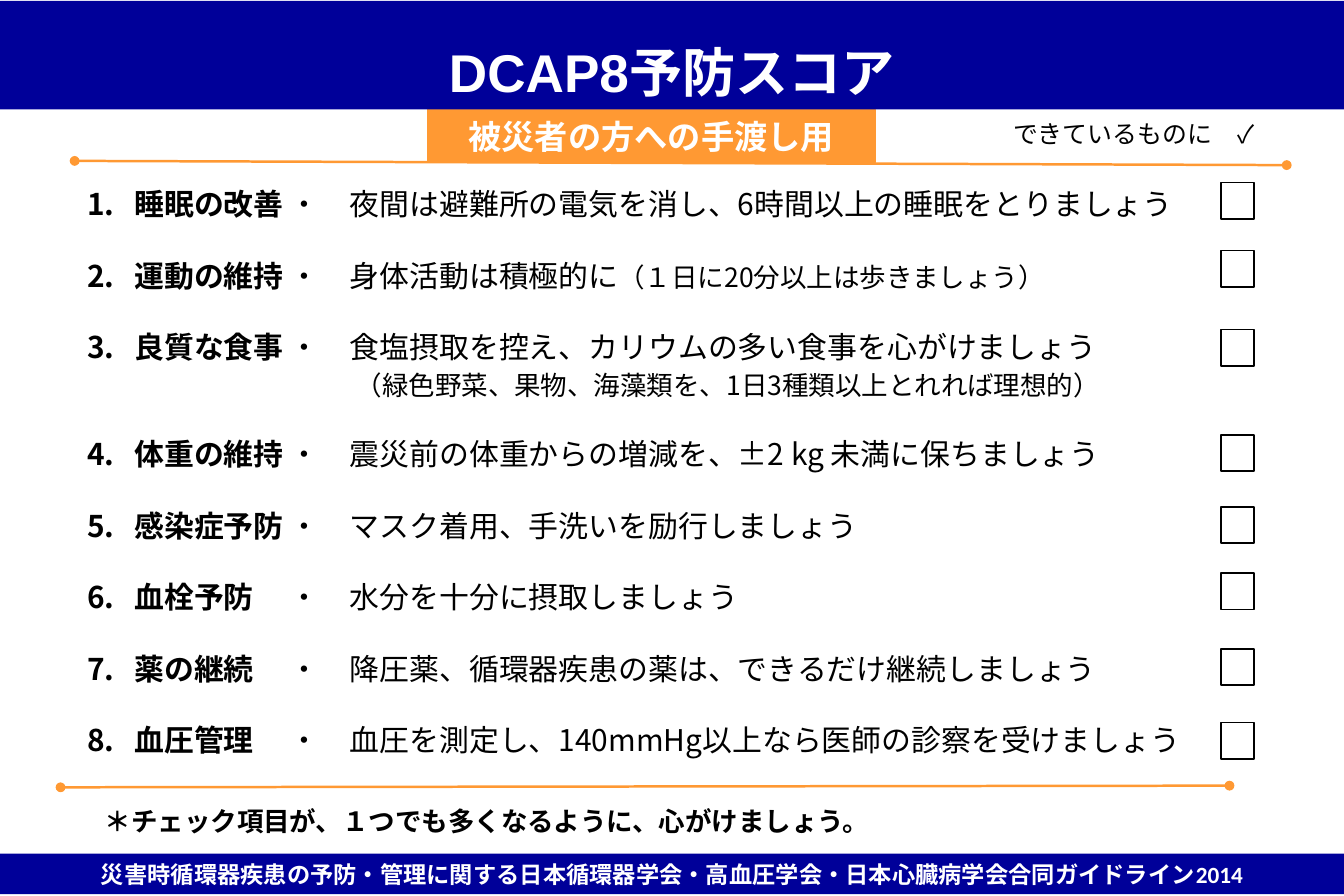
from lxml.etree import SubElement
from pptx import Presentation
from pptx.dml.color import RGBColor
from pptx.enum.lang import MSO_LANGUAGE_ID
from pptx.enum.shapes import MSO_CONNECTOR, MSO_SHAPE
from pptx.enum.text import MSO_ANCHOR, PP_ALIGN
from pptx.oxml.ns import qn
from pptx.util import Pt

JAPANESE = "Noto Sans CJK JP"
NAVY, ORANGE, WHITE, BLACK = "000099", "FF9933", "FFFFFF", "000000"
LINE_PITCH = 21.55
LABEL_STOP, ADVICE_STOP, DETAIL_INDENT = 28.5, 122.3, 162

# label, advice, smaller remark, smaller second line, top of the check box
ITEMS = [
    ("睡眠の改善", "夜間は避難所の電気を消し、6時間以上の睡眠をとりましょう", "", "", 110),
    ("運動の維持", "身体活動は積極的に", "（１日に20分以上は歩きましょう）", "", 151),
    ("良質な食事", "食塩摂取を控え、カリウムの多い食事を心がけましょう", "",
     "（緑色野菜、果物、海藻類を、1日3種類以上とれれば理想的）", 198.5),
    ("体重の維持", "震災前の体重からの増減を、±2 kg 未満に保ちましょう", "", "", 262),
    ("感染症予防", "マスク着用、手洗いを励行しましょう", "", "", 305.5),
    ("血栓予防", "水分を十分に摂取しましょう", "", "", 345.5),
    ("薬の継続", "降圧薬、循環器疾患の薬は、できるだけ継続しましょう", "", "", 391),
    ("血圧管理", "血圧を測定し、140mmHg以上なら医師の診察を受けましょう", "", "", 435.5),
]


def color(code):
    """Turn a hex string into a colour."""
    return RGBColor.from_string(code)


def write(paragraph, text, size=18, bold=False, ink=BLACK, font=JAPANESE):
    """Add a formatted run to a paragraph."""
    run = paragraph.add_run()
    run.text = text
    run.font.size = Pt(size)
    run.font.bold = bold
    run.font.color.rgb = color(ink)
    run.font.name = font
    run.font.language_id = MSO_LANGUAGE_ID.JAPANESE
    SubElement(run.font._element, qn("a:ea"), typeface=JAPANESE)


def add_box(slide, left, top, width, height, fill, outline=None, weight=1):
    """Add a filled rectangle, outlined if a colour is given."""
    box = slide.shapes.add_shape(
        MSO_SHAPE.RECTANGLE, Pt(left), Pt(top), Pt(width), Pt(height))
    box.shadow.inherit = False
    box.fill.solid()
    box.fill.fore_color.rgb = color(fill)
    if outline:
        box.line.color.rgb = color(outline)
        box.line.width = Pt(weight)
    else:
        box.line.fill.background()
    return box


def add_banner(slide, left, top, width, height, text, fill, outline=None,
               spacing=1.0, **style):
    """Add a coloured bar with centred bold white text."""
    frame = add_box(slide, left, top, width, height, fill, outline, 0.75).text_frame
    frame.word_wrap = True
    frame.vertical_anchor = MSO_ANCHOR.MIDDLE
    heading = frame.paragraphs[0]
    heading.alignment = PP_ALIGN.CENTER
    heading.line_spacing = spacing
    write(heading, text, bold=True, ink=WHITE, **style)


def add_text(slide, left, top, width, height):
    """Add an empty wrapping text box and return its frame."""
    frame = slide.shapes.add_textbox(
        Pt(left), Pt(top), Pt(width), Pt(height)).text_frame
    frame.word_wrap = True
    return frame


def add_rule(slide, x1, y1, x2, y2):
    """Add an orange line with round ends."""
    rule = slide.shapes.add_connector(
        MSO_CONNECTOR.STRAIGHT, Pt(x1), Pt(y1), Pt(x2), Pt(y2))
    rule.line.color.rgb = color(ORANGE)
    rule.line.width = Pt(1.5)
    stroke = rule.line._get_or_add_ln()
    for end in ("a:headEnd", "a:tailEnd"):
        SubElement(stroke, qn(end), type="oval")
    SubElement(rule._element.spPr, qn("a:effectLst"))


def set_columns(paragraph, *stops):
    """Set left tab stops on a paragraph."""
    tabs = SubElement(paragraph._p.get_or_add_pPr(), qn("a:tabLst"))
    for stop in stops:
        SubElement(tabs, qn("a:tab"), pos=str(int(Pt(stop))), algn="l")


def add_checklist(slide):
    """Add the numbered advice and a check box for each item."""
    frame = add_text(slide, 45.4, 108.5, 695.5, 356)
    for number, (label, advice, remark, detail, box_top) in enumerate(ITEMS, 1):
        entry = frame.paragraphs[0] if number == 1 else frame.add_paragraph()
        entry.line_spacing = Pt(LINE_PITCH)
        entry.space_after = Pt(0 if detail else LINE_PITCH)
        set_columns(entry, LABEL_STOP, ADVICE_STOP)
        write(entry, f"{number}.\t{label}\t", bold=True)
        write(entry, f"・　{advice}")
        if remark:
            write(entry, remark, size=16)
        if detail:
            second_line = frame.add_paragraph()
            second_line.line_spacing = Pt(LINE_PITCH)
            second_line.space_after = Pt(LINE_PITCH)
            second_line._p.get_or_add_pPr().set("marL", str(int(Pt(DETAIL_INDENT))))
            write(second_line, detail, size=16)
        add_box(slide, 736, box_top, 20, 22, WHITE, BLACK)


def main():
    """Build the slide and save it."""
    deck = Presentation()
    deck.slide_width, deck.slide_height = Pt(810), Pt(540)
    slide = deck.slides.add_slide(deck.slide_layouts[6])

    add_checklist(slide)
    add_rule(slide, 45, 97, 775.5, 99.5)
    add_rule(slide, 36.5, 474.5, 741, 473.5)

    check_hint = add_text(slide, 603.5, 68, 172, 25).paragraphs[0]
    write(check_hint, "できているものに　✓", size=15)
    reminder = add_text(slide, 55.5, 481.5, 476.5, 30).paragraphs[0]
    reminder.alignment = PP_ALIGN.CENTER
    write(reminder, "＊チェック項目が、１つでも多くなるように、心がけましょう。", size=16, bold=True)

    add_banner(slide, 257.5, 66, 270, 32, "被災者の方への手渡し用", ORANGE, ORANGE, size=20)
    add_banner(slide, 0, 0.5, 810, 65.5, "DCAP8予防スコア", NAVY,
               spacing=1.5, size=32, font="Arial")
    add_banner(slide, 0, 514.5, 810, 24.5,
               "災害時循環器疾患の予防・管理に関する日本循環器学会・高血圧学会・日本心臓病学会合同ガイドライン2014",
               NAVY, size=14, font="Calibri")
    deck.save("out.pptx")


if __name__ == "__main__":
    main()
